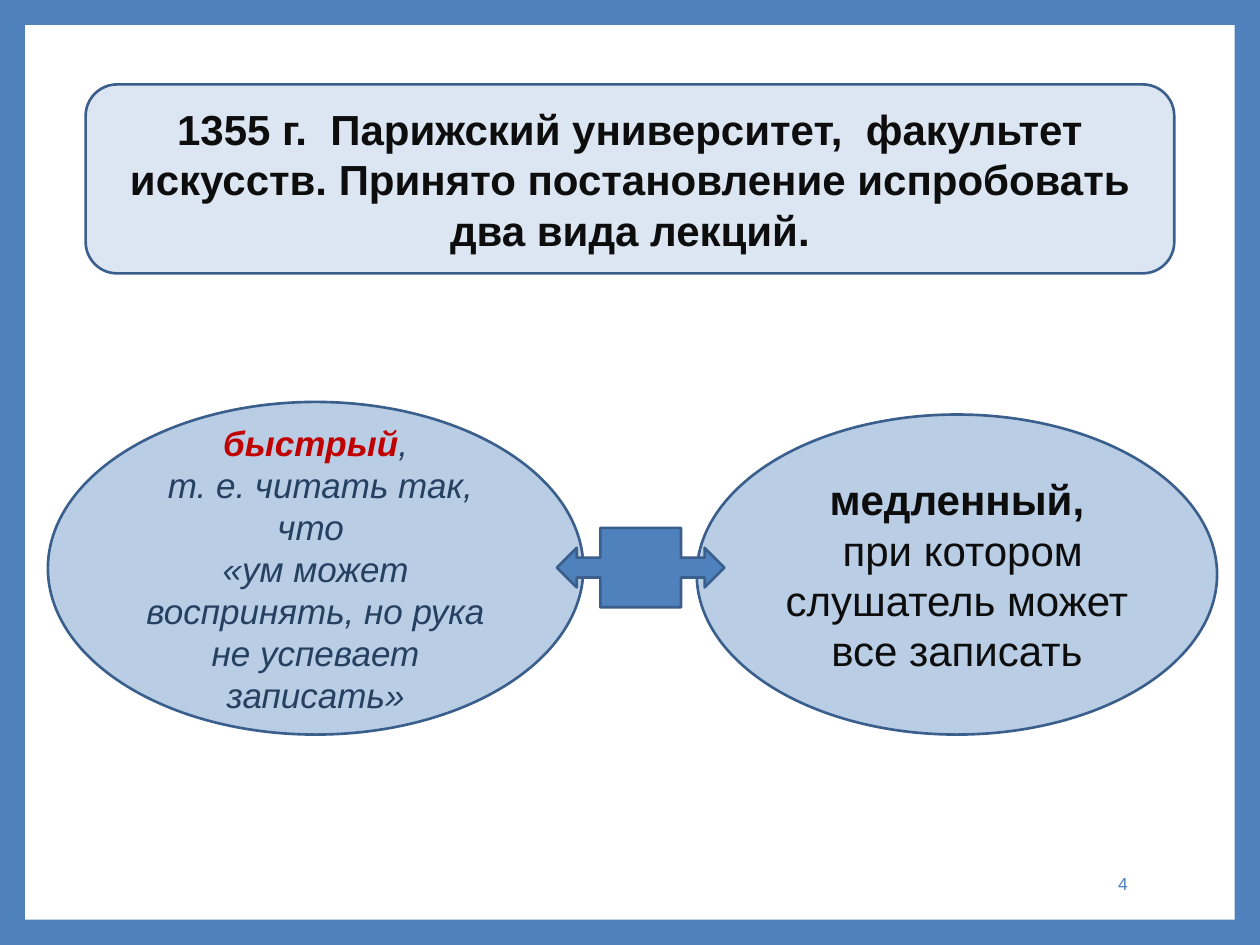
from dataclasses import dataclass

from pptx import Presentation
from pptx.dml.color import RGBColor
from pptx.enum.shapes import MSO_SHAPE
from pptx.enum.text import MSO_ANCHOR, MSO_AUTO_SIZE, PP_ALIGN
from pptx.util import Inches, Pt

RECT, ROUNDED = MSO_SHAPE.RECTANGLE, MSO_SHAPE.ROUNDED_RECTANGLE
OVAL, CALLOUT = MSO_SHAPE.OVAL, MSO_SHAPE.LEFT_RIGHT_ARROW_CALLOUT
CENTER, RIGHT = PP_ALIGN.CENTER, PP_ALIGN.RIGHT
MIDDLE, NO_FIT = MSO_ANCHOR.MIDDLE, MSO_AUTO_SIZE.NONE
TITLE_ONLY = 5


@dataclass(frozen=True)
class Theme:
    font: str = "Arial"
    accent: str = "4F81BD"
    paper: str = "FFFFFF"
    card: str = "DCE6F2"
    oval: str = "B9CDE5"
    outline: str = "3A5F8C"
    ink: str = "0D0D0D"
    navy: str = "254061"
    red: str = "C00000"
    large: int = 24
    medium: int = 20
    small: int = 10
    line: float = 1.5


T = Theme()


def rgb(color):
    return RGBColor.from_string(color)


def add_shape(s, kind, box, fill, outlined=True):
    sp = s.shapes.add_shape(kind, *map(Inches, box))
    sp.shadow.inherit = False
    sp.fill.solid()
    sp.fill.fore_color.rgb = rgb(fill)
    if outlined:
        sp.line.color.rgb = rgb(T.outline)
        sp.line.width = Pt(T.line)
    else:
        sp.line.fill.background()
    return sp


def add_run(p, text, size=T.large, color=T.ink, bold=False, italic=False):
    r = p.add_run()
    r.text = text
    r.font.name = T.font
    r.font.size = Pt(size)
    r.font.bold = bold
    r.font.italic = italic
    r.font.color.rgb = rgb(color)


def write(sp, paragraphs, align=CENTER):
    """Each paragraph is a list of (text, format) pairs."""
    tf = sp.text_frame
    tf.word_wrap = True
    tf.auto_size = NO_FIT
    tf.vertical_anchor = MIDDLE
    for i, runs in enumerate(paragraphs):
        p = tf.add_paragraph() if i else tf.paragraphs[0]
        p.alignment = align
        for text, fmt in runs:
            add_run(p, text, **fmt)


def add_frame(s, box):
    # Coloured border around a white sheet
    s.background.fill.solid()
    s.background.fill.fore_color.rgb = rgb(T.accent)
    add_shape(s, RECT, box, T.paper, outlined=False)


def add_title(s, box, text):
    # Rounded card with the title placeholder in front of it
    add_shape(s, ROUNDED, box, T.card)
    title = s.shapes.title
    title.left, title.top, title.width, title.height = map(Inches, box)
    s.shapes._spTree.append(title._element)
    write(title, [[(text, dict(bold=True))]])


def add_comparison(s, box):
    # Two ovals on a common base line, joined by a double arrow
    x, y, w, h = box
    left_w, right_w, right_h = 4.25, 4.13, 2.54
    fast = add_shape(s, OVAL, (x, y, left_w, h), T.oval)
    quote = dict(size=T.medium, color=T.navy, italic=True)
    write(fast, [
        [("быстрый", dict(quote, color=T.red, bold=True)), (",", quote)],
        [(" т. е. читать так, что ", quote)],
        [("«ум может воспринять, но рука не успевает записать»", quote)],
    ])
    slow = add_shape(
        s, OVAL, (x + w - right_w, y + h - right_h, right_w, right_h), T.oval)
    write(slow, [
        [("медленный,", dict(bold=True))],
        [(" при котором слушатель может все записать", {})],
    ])
    add_shape(s, CALLOUT, (x + 4.04, y + 1, 1.33, 0.63), T.accent)


def add_page_number(s, box, number):
    sp = s.shapes.add_textbox(*map(Inches, box))
    write(sp, [[(number, dict(size=T.small, color=T.accent))]], RIGHT)


def main():
    prs = Presentation()
    prs.slide_width, prs.slide_height = Inches(10), Inches(7.5)
    s = prs.slides.add_slide(prs.slide_layouts[TITLE_ONLY])
    add_frame(s, (0.2, 0.2, 9.6, 7.1))
    add_title(s, (0.68, 0.67, 8.64, 1.5),
              "1355 г.  Парижский университет,  факультет искусств. "
              "Принято постановление испробовать два вида лекций.")
    add_comparison(s, (0.38, 3.19, 9.28, 2.64))
    add_page_number(s, (7.65, 6.81, 1.4, 0.4), "4")
    prs.save("out.pptx")


if __name__ == "__main__":
    main()
